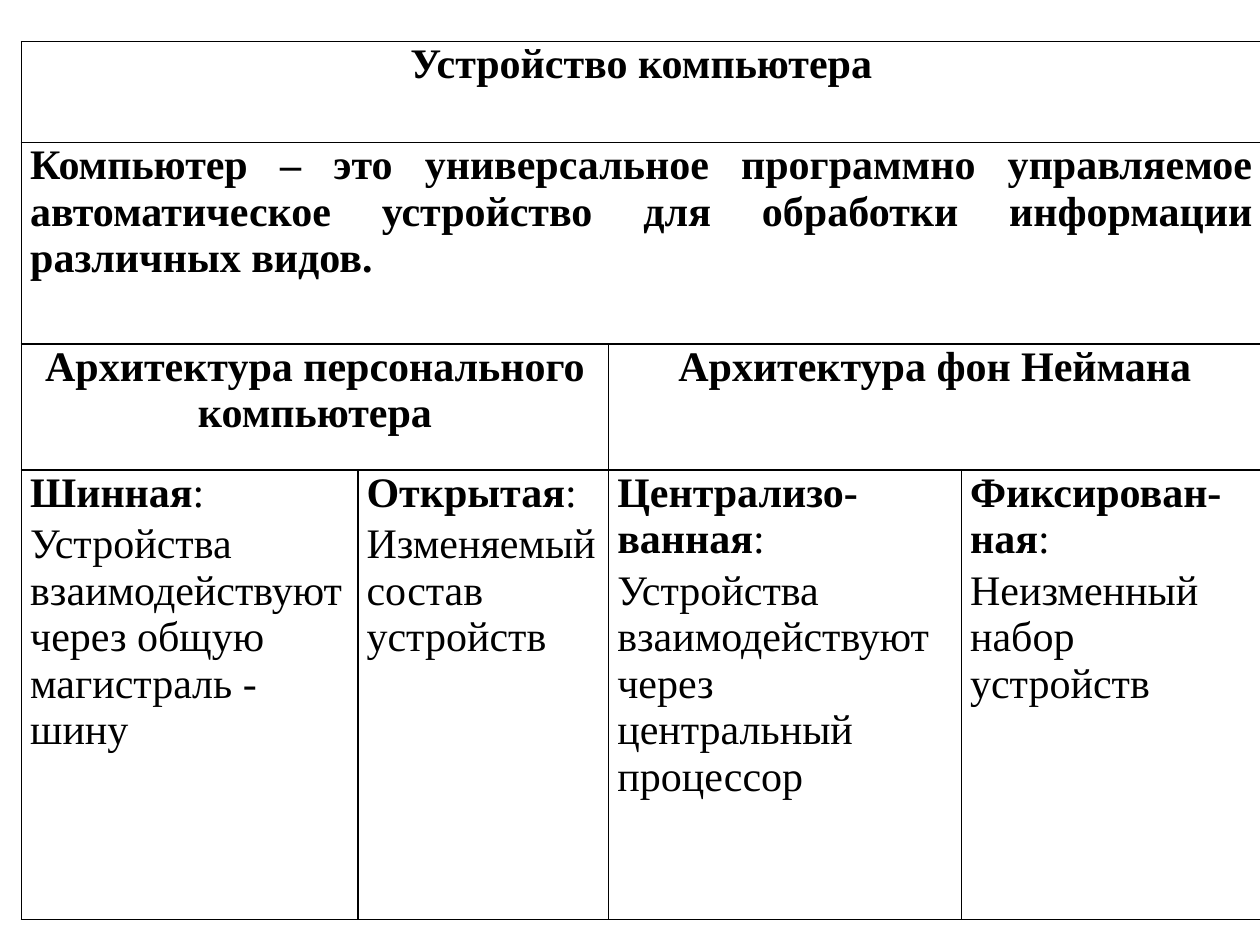
import pptx
import pptx.dml.color
import pptx.enum.text
import pptx.oxml
import pptx.oxml.ns
import pptx.util
from pptx.util import Inches

COLORS = {"ink": "000000", "border": "000000"}
FONT = "Times New Roman"
LEFT = pptx.enum.text.PP_ALIGN.LEFT
CENTER = pptx.enum.text.PP_ALIGN.CENTER
JUSTIFY = pptx.enum.text.PP_ALIGN.JUSTIFY

COLUMN_WIDTHS = [2.67, 1.99, 2.8, 2.38]
ROW_HEIGHTS = [0.8, 1.6, 1, 3.57]

HEADINGS = [
    (0, 0, 4, CENTER, "Устройство компьютера"),
    (1, 0, 4, JUSTIFY, "Компьютер – это универсальное программно управляемое "
                       "автоматическое устройство для обработки информации различных видов."),
    (2, 0, 2, CENTER, "Архитектура персонального компьютера"),
    (2, 2, 2, CENTER, "Архитектура фон Неймана"),
]
PRINCIPLES = [
    ("Шинная", "Устройства взаимодействуют через общую магистраль - шину", LEFT),
    ("Открытая", "Изменяемый состав устройств", JUSTIFY),
    ("Централизо-ванная", "Устройства взаимодействуют через центральный процессор", JUSTIFY),
    ("Фиксирован-ная", "Неизменный набор устройств", JUSTIFY),
]


def format_cell(cell):
    cell.margin_left = cell.margin_right = Inches(0.07)
    cell.margin_top = cell.margin_bottom = 0
    properties = cell._tc.get_or_add_tcPr()
    for position, side in enumerate(("lnL", "lnR", "lnT", "lnB")):
        border = pptx.oxml.parse_xml(
            f'<a:{side} {pptx.oxml.ns.nsdecls("a")} w="12700"><a:solidFill>'
            f'<a:srgbClr val="{COLORS["border"]}"/></a:solidFill></a:{side}>')
        properties.insert(position, border)
    cell.fill.background()


def write_paragraph(paragraph, alignment, *parts):
    paragraph.alignment = alignment
    paragraph.space_before = pptx.util.Pt(2.9)
    for words, bold in parts:
        run = paragraph.add_run()
        run.text = words
        run.font.name = FONT
        run.font.size = pptx.util.Pt(24)
        run.font.bold = bold
        run.font.color.rgb = pptx.dml.color.RGBColor.from_string(COLORS["ink"])


def add_architecture_table(slide, left, top, width, height):
    table = slide.shapes.add_table(
        len(ROW_HEIGHTS), len(COLUMN_WIDTHS), left, top, width, height).table
    table.first_row = table.horz_banding = False
    for column, column_width in zip(table.columns, COLUMN_WIDTHS):
        column.width = Inches(column_width)
    for row, row_height in zip(table.rows, ROW_HEIGHTS):
        row.height = Inches(row_height)
    for cell in table.iter_cells():
        format_cell(cell)

    for row, column, span, alignment, heading in HEADINGS:
        cell = table.cell(row, column)
        cell.merge(table.cell(row, column + span - 1))
        write_paragraph(cell.text_frame.paragraphs[0], alignment, (heading, True))

    for column, (principle, meaning, alignment) in enumerate(PRINCIPLES):
        frame = table.cell(3, column).text_frame
        write_paragraph(frame.paragraphs[0], JUSTIFY, (principle, True), (":", False))
        write_paragraph(frame.add_paragraph(), alignment, (meaning, False))


def main():
    presentation = pptx.Presentation()
    presentation.slide_width = Inches(10)
    presentation.slide_height = Inches(7.5)
    slide = presentation.slides.add_slide(presentation.slide_layouts[6])
    add_architecture_table(slide, Inches(0.17), Inches(0.33), Inches(9.83), Inches(6.97))
    presentation.save("out.pptx")


if __name__ == "__main__":
    main()
